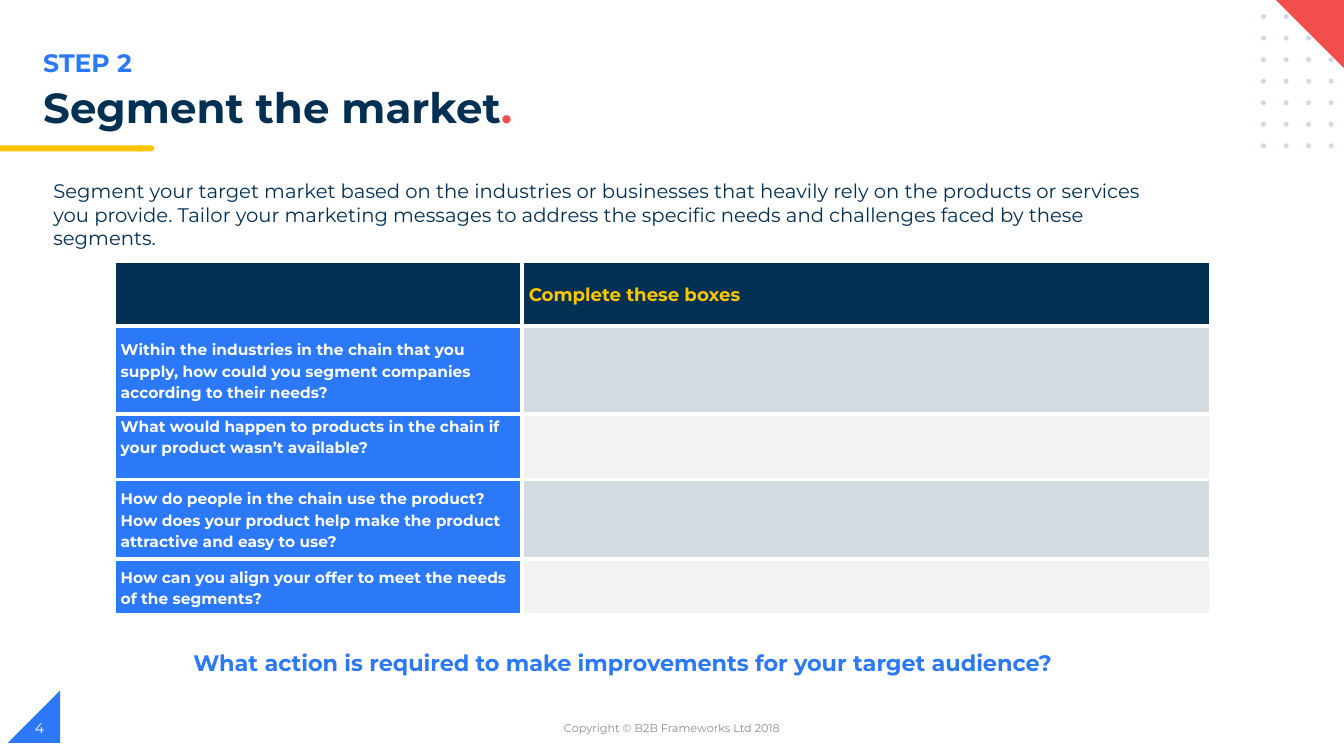
from itertools import product

from lxml import etree
from pptx import Presentation
from pptx.dml.color import RGBColor
from pptx.enum import shapes, text
from pptx.oxml import ns
from pptx.util import Pt

FONT = "Montserrat"
NAVY, BLUE, YELLOW, RED = "023053", "2B79F8", "FFC600", "F24E4E"
MIST, PALE, GREY, WHITE = "D1DBE0", "F2F2F2", "888C97", "FFFFFF"
QUESTIONS = [
    "Within the industries in the chain that you supply, how could you segment "
    "companies according to their needs?",
    "What would happen to products in the chain if your product wasn’t available?",
    "How do people in the chain use the product? How does your product help make "
    "the product attractive and easy to use?",
    "How can you align your offer to meet the needs of the segments?",
]
INTRO = (
    "Segment your target market based on the industries or businesses that heavily "
    "rely on the products or services you provide. Tailor your marketing messages to "
    "address the specific needs and challenges faced by these segments."
)


def color(value):
    return RGBColor.from_string(value)


def set_font(font, size, value, bold=False):
    font.name, font.size, font.bold = FONT, Pt(size), bold
    font.color.rgb = color(value)


def add_shape(page, kind, box, fill, rotation=0):
    shape = page.shapes.add_shape(kind, *map(Pt, box))
    shape.shadow.inherit = False
    shape.fill.solid()
    shape.fill.fore_color.rgb = color(fill)
    shape.line.fill.background()
    shape.rotation = rotation


def add_text(page, box, words, size, value, bold=False, middle=False):
    frame = page.shapes.add_textbox(*map(Pt, box)).text_frame
    frame.word_wrap = True
    if middle:
        frame.vertical_anchor = text.MSO_ANCHOR.MIDDLE
    para = frame.paragraphs[0]
    para.add_run().text = words
    set_font(para.font, size, value, bold)
    return para


def add_corner(page, box):
    left, top, width, height = box
    # Dot grid, four across and seven down
    for column, row in product(range(4), range(7)):
        dot = (left + 16.1 * column, top + 10 + 15.4 * row, 3.6, 3.6)
        add_shape(page, shapes.MSO_SHAPE.OVAL, dot, MIST)
    # Red corner
    side = 52
    corner = (left + width - side, top - 0.7, side, side)
    add_shape(page, shapes.MSO_SHAPE.RIGHT_TRIANGLE, corner, RED, 180)


def add_heading(page, box):
    left, top, width, height = box
    add_text(page, (left, top, 482, 29), "STEP 2", 18, BLUE, True)
    title = add_text(page, (left, top + 28.8, width, 40.3),
                     "Segment the market", 30, NAVY, True)
    title.line_spacing = 0.9
    stop = title.add_run()
    stop.text = "."
    stop.font.color.rgb = color(RED)
    # Yellow rule with a rounded end
    rule_top = top + height - 4.3
    add_shape(page, shapes.MSO_SHAPE.FLOWCHART_TERMINATOR, (96.5, rule_top, 13.7, 4.3), YELLOW)
    add_shape(page, shapes.MSO_SHAPE.RECTANGLE, (0, rule_top, 101.5, 4.3), YELLOW)


def add_borders(cell):
    properties = cell._tc.get_or_add_tcPr()
    for side in ("lnL", "lnR", "lnT", "lnB"):
        line = etree.SubElement(properties, ns.qn(f"a:{side}"), w=str(Pt(3)))
        fill = etree.SubElement(line, ns.qn("a:solidFill"))
        etree.SubElement(fill, ns.qn("a:srgbClr"), val=WHITE)


def fill_cell(cell, fill, words="", size=11, value=WHITE):
    add_borders(cell)
    cell.fill.solid()
    cell.fill.fore_color.rgb = color(fill)
    cell.margin_left = cell.margin_right = Pt(5)
    cell.margin_top = cell.margin_bottom = 0
    cell.vertical_anchor = text.MSO_ANCHOR.MIDDLE
    para = cell.text_frame.paragraphs[0]
    para.line_spacing = 1.15
    if words:
        para.add_run().text = words
    set_font(para.font, size, value, True)


def add_questions(page, box):
    row_heights = [46.5, 63, 46.5, 57, 40]
    table = page.shapes.add_table(len(row_heights), 2, *map(Pt, box)).table
    table.first_row = table.horz_banding = False
    for column, width in zip(table.columns, (291.5, 492.5)):
        column.width = Pt(width)
    for row, height in zip(table.rows, row_heights):
        row.height = Pt(height)
    # Header row
    fill_cell(table.cell(0, 0), NAVY)
    fill_cell(table.cell(0, 1), NAVY, "Complete these boxes", 13, YELLOW)
    # Questions with empty answer boxes
    for row, question in enumerate(QUESTIONS, 1):
        fill_cell(table.cell(row, 0), BLUE, question)
        fill_cell(table.cell(row, 1), MIST if row % 2 else PALE)
    table.cell(2, 0).vertical_anchor = text.MSO_ANCHOR.TOP


def add_footer(page, box):
    left, top, width, height = box
    add_shape(page, shapes.MSO_SHAPE.RIGHT_TRIANGLE, (left, top, 37.4, 37.4), BLUE, 270)
    notice = add_text(page, (left + 312.5, top + 12.2, 324, 29),
                      "Copyright © B2B Frameworks Ltd 2018", 8, GREY, middle=True)
    notice.alignment = text.PP_ALIGN.CENTER
    add_text(page, (left + 12.2, top + 12.2, 216, 29), "4", 10, WHITE, middle=True)


def main():
    deck = Presentation()
    deck.slide_width, deck.slide_height = Pt(960), Pt(540)
    page = deck.slides.add_slide(deck.slide_layouts[6])
    add_corner(page, (900.7, 0, 62, 106))
    add_heading(page, (23.8, 30.2, 803, 78))
    add_text(page, (31, 124.5, 811.5, 59), INTRO, 14, NAVY)
    add_questions(page, (81.2, 186.5, 784, 253))
    add_text(page, (131, 460, 636, 27),
             "What action is required to make improvements for your target audience?",
             16, BLUE, True)
    add_footer(page, (5.6, 493.2, 949, 41))
    deck.save("out.pptx")


if __name__ == "__main__":
    main()
